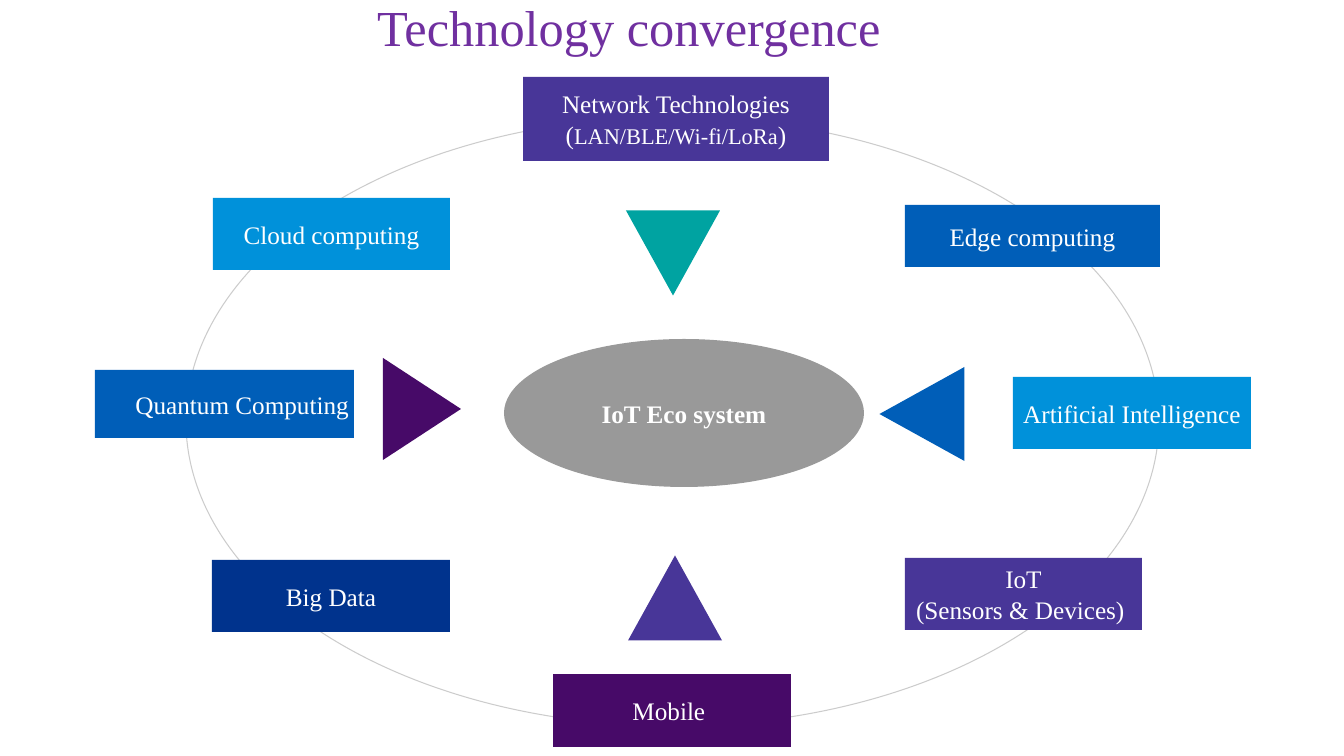
from pptx import Presentation, util as u
from pptx.dml.color import RGBColor
from pptx.enum import shapes, text

PX = 914400 / 100.8
FONT = "Times New Roman"
COLORS = {
    "title": "7030A0", "white": "FFFFFF", "ring": "CCCCCC", "hub": "999999",
    "teal": "00A3A1", "plum": "470A68", "violet": "483698",
    "blue": "005EB8", "sky": "0091DA", "navy": "00338D",
}
INDENT = 24
CENTER, RIGHT = text.PP_ALIGN.CENTER, text.PP_ALIGN.RIGHT
KIND = shapes.MSO_SHAPE

# centre x, centre y, width, height, rotation, colour
ARROWS = [
    (578, 176, 94, 85, 180, "teal"),
    (327, 332, 102, 78, 90, "plum"),
    (580, 521, 94, 85, 0, "violet"),
    (827, 337, 94, 85, 270, "blue"),
]

# left, top, width, height, colour, alignment, lines of (wording, size) runs
TECHNOLOGIES = [
    (118, 121, 237, 72, "sky", CENTER, [[("Cloud computing", 18)]]),
    (810, 128, 255, 62, "blue", CENTER, [[("Edge computing", 18)]]),
    (117, 483, 238, 72, "navy", CENTER, [[("Big Data", 18)]]),
    (810, 481, 237, 72, "violet", CENTER,
     [[("IoT", 18)], [("(Sensors & Devices) ", 18)]]),
    (428, 0, 306, 84, "violet", CENTER,
     [[("Network Technologies", 18)],
      [("(", 18), ("LAN/BLE/Wi-fi/LoRa", 16), (")", 18)]]),
    (458, 597, 238, 73, "plum", CENTER, [[("Mobile ", 18)]]),
    (0, 293, 259, 68, "blue", RIGHT, [[("Quantum Computing", 18)]]),
    (918, 300, 238, 72, "sky", CENTER, [[("Artificial Intelligence", 18)]]),
]


def px(length):
    return u.Emu(round(length * PX))


def rgb(name):
    return RGBColor.from_string(COLORS[name])


def add_run(paragraph, wording, size, color, bold=False):
    run = paragraph.add_run()
    run.text = wording
    run.font.name = FONT
    run.font.size = u.Pt(size)
    run.font.bold = bold
    run.font.color.rgb = rgb(color)


def add_filled(slide, kind, left, top, width, height, color):
    figure = slide.shapes.add_shape(kind, px(left), px(top), px(width), px(height))
    figure.shadow.inherit = False
    figure.line.fill.background()
    if color:
        figure.fill.solid()
        figure.fill.fore_color.rgb = rgb(color)
    else:
        figure.fill.background()
    return figure


def write_label(figure, lines, align, bold=False):
    frame = figure.text_frame
    frame.word_wrap = True
    frame.vertical_anchor = text.MSO_ANCHOR.MIDDLE
    frame.margin_left = frame.margin_right = px(5)
    frame.margin_top = frame.margin_bottom = px(5)
    for number, runs in enumerate(lines):
        paragraph = frame.add_paragraph() if number else frame.paragraphs[0]
        paragraph.alignment = align
        properties = paragraph._p.get_or_add_pPr()
        properties.set("marL", str(px(INDENT)))
        properties.set("indent", str(-px(INDENT)))
        for wording, size in runs:
            add_run(paragraph, wording, size, "white", bold)


def build_title(slide, left, top, width, height):
    title = slide.shapes.title
    title.left, title.top = px(left), px(top)
    title.width, title.height = px(width), px(height)
    frame = title.text_frame
    frame.word_wrap = True
    frame.auto_size = text.MSO_AUTO_SIZE.NONE
    frame.vertical_anchor = text.MSO_ANCHOR.MIDDLE
    frame.paragraphs[0].alignment = CENTER
    add_run(frame.paragraphs[0], "Technology convergence", 36, "title")


def build_ecosystem(slide, left, top):
    # Arrows pointing to the hub
    for x, y, width, height, rotation, color in ARROWS:
        arrow = add_filled(slide, KIND.ISOSCELES_TRIANGLE, left + x - width / 2,
                           top + y - height / 2, width, height, color)
        arrow.rotation = rotation

    # Ring behind the technologies
    ring = add_filled(slide, KIND.OVAL, left + 91, top + 40, 973, 609, None)
    ring.line.color.rgb = rgb("ring")
    ring.line.width = u.Pt(0.75)

    # Technologies around the ring
    for x, y, width, height, color, align, lines in TECHNOLOGIES:
        technology = add_filled(slide, KIND.RECTANGLE, left + x, top + y,
                                width, height, color)
        write_label(technology, lines, align)

    # Hub
    hub = add_filled(slide, KIND.OVAL, left + 409, top + 262, 360, 148, "hub")
    write_label(hub, [[(" IoT Eco system ", 18)]], CENTER, bold=True)


def main():
    deck = Presentation()
    deck.slide_width, deck.slide_height = px(1344), px(756)
    slide = deck.slides.add_slide(deck.slide_layouts[5])
    build_title(slide, 107, -61, 1044, 174)
    build_ecosystem(slide, 95, 77)
    deck.save("out.pptx")


if __name__ == "__main__":
    main()
